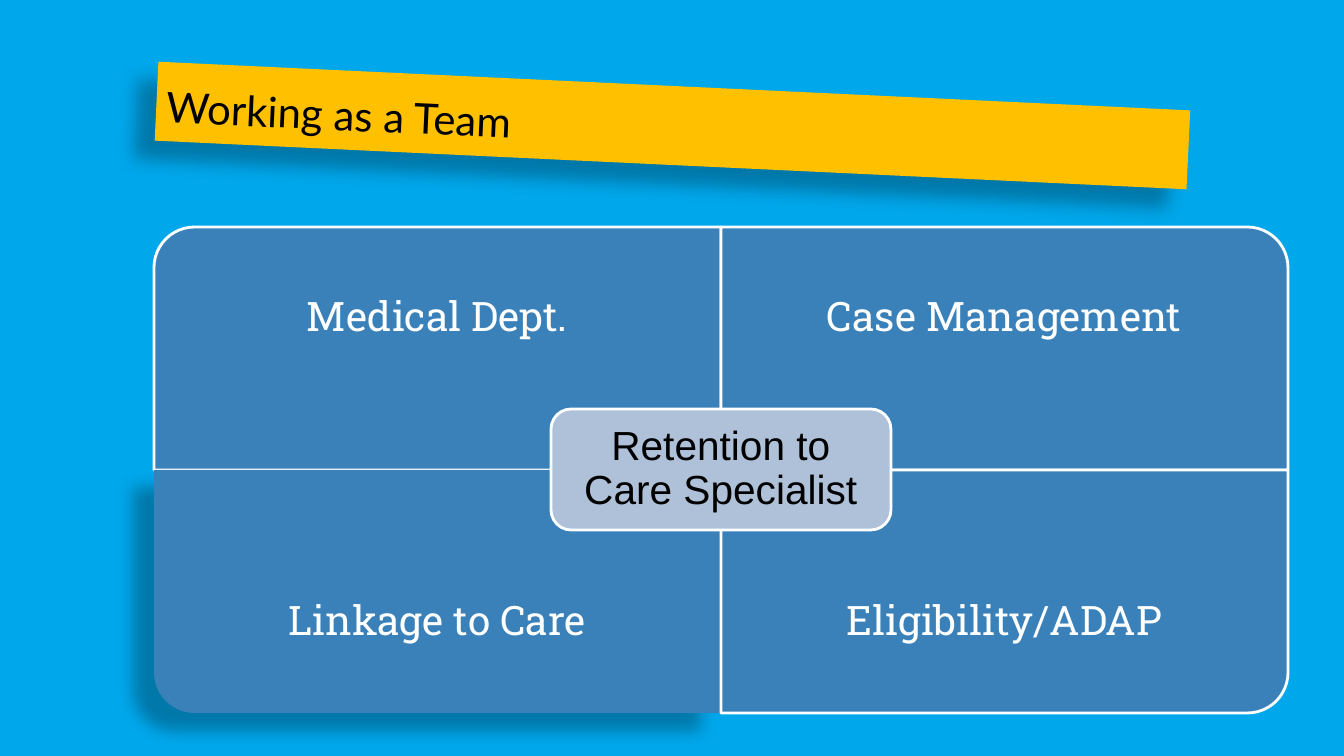
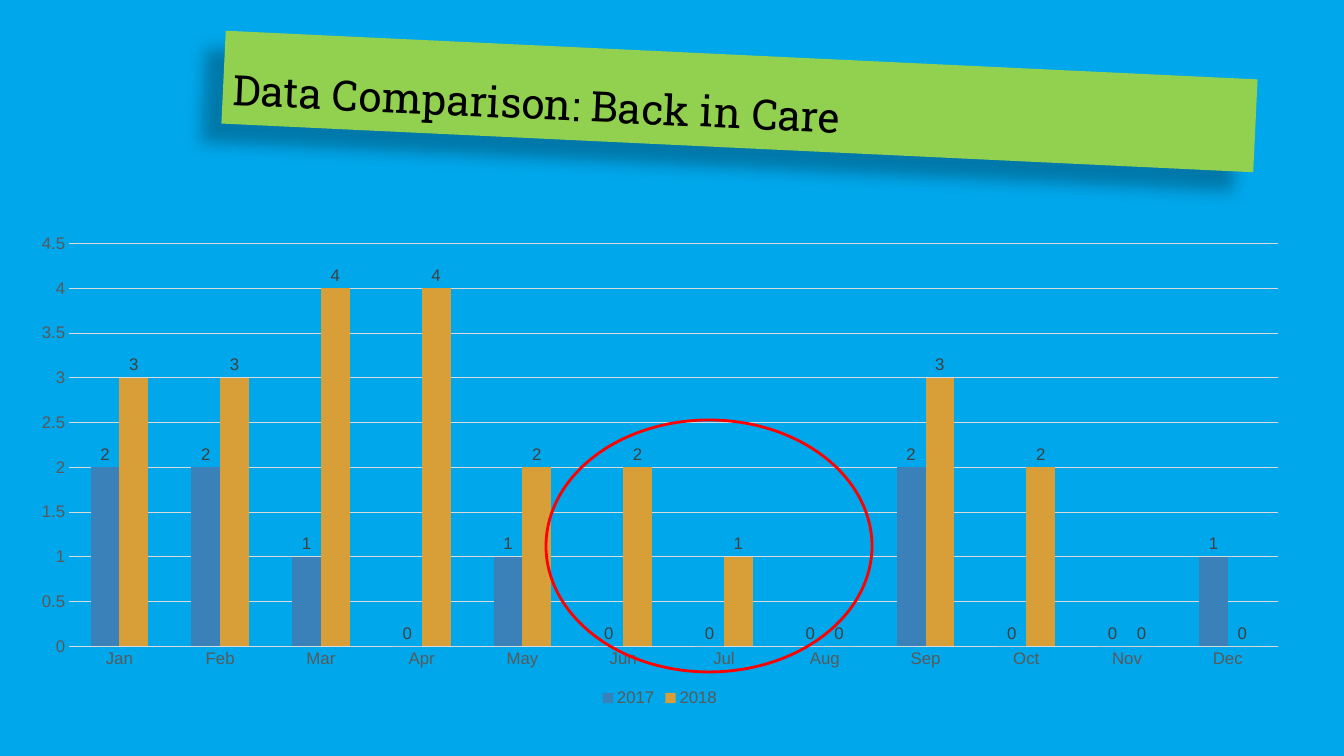
"""Build two slides on teamwork and back-in-care data."""
import dataclasses

import lxml.etree
import pptx
import pptx.chart.data
import pptx.dml.color
import pptx.enum.chart
import pptx.enum.shapes
import pptx.enum.text
import pptx.oxml.ns
import pptx.util

SHAPE = pptx.enum.shapes.MSO_SHAPE
ANCHOR = pptx.enum.text.MSO_ANCHOR
ALIGN = pptx.enum.text.PP_ALIGN


@dataclasses.dataclass(frozen=True)
class Theme:
    """Hold the colours, fonts and type sizes."""
    back: str = "00A7EB"
    gold: str = "FFC000"
    green: str = "92D050"
    blue: str = "3A81BA"
    orange: str = "D89F39"
    pale: str = "AFC1D9"
    white: str = "FFFFFF"
    black: str = "000000"
    red: str = "FF0000"
    grid: str = "D9D9D9"
    axis_text: str = "595959"
    label_text: str = "404040"
    sans: str = "Arial"
    title_sans: str = "Lato"
    slab: str = "Roboto Slab"
    title_size: int = 30
    panel_size: int = 29
    chart_size: int = 12


THEME = Theme()


def px(n):
    """Turn pixels into EMU."""
    return pptx.util.Emu(round(n * 914400 / 100.8))


def rgb(value):
    """Turn a hex string into a colour."""
    return pptx.dml.color.RGBColor.from_string(value)


def set_all(obj, **values):
    """Set several attributes on an object."""
    for name, value in values.items():
        setattr(obj, name, value)


def set_font(font, name, size, colour):
    """Set the face, size and colour of a font."""
    set_all(font, name=name, size=pptx.util.Pt(size), bold=False)
    font.color.rgb = rgb(colour)


def set_fill(obj, colour):
    """Fill an object with one colour."""
    obj.fill.solid()
    obj.fill.fore_color.rgb = rgb(colour)


def add_shadow(sp):
    """Cast a soft shadow to the lower left."""
    sp.shadow.inherit = False
    qn = pptx.oxml.ns.qn
    effects = sp._element.spPr.find(qn("a:effectLst"))
    shadow = lxml.etree.SubElement(
        effects, qn("a:outerShdw"), blurRad="150000", dist="250000",
        dir="8460000", algn="tr", rotWithShape="0")
    colour = lxml.etree.SubElement(shadow, qn("a:srgbClr"), val=THEME.black)
    lxml.etree.SubElement(colour, qn("a:alpha"), val="28000")


def write(sp, text, font, size, colour, inset, anchor, align, spacing=1.0):
    """Write one formatted paragraph into a shape."""
    tf = sp.text_frame
    set_all(tf, word_wrap=True, vertical_anchor=anchor,
            auto_size=pptx.enum.text.MSO_AUTO_SIZE.NONE)
    set_all(tf, **{"margin_" + side: px(inset)
                   for side in ("left", "top", "right", "bottom")})
    p = tf.paragraphs[0]
    set_all(p, alignment=align, line_spacing=spacing)
    r = p.add_run()
    r.text = text
    set_font(r.font, font, size, colour)


def write_panel(sp, text, font, colour, inset):
    """Write a centred panel caption."""
    write(sp, text, font, THEME.panel_size, colour, inset,
          ANCHOR.MIDDLE, ALIGN.CENTER, 0.9)


def add_slide(prs, title, font, fill, left, top, height):
    """Add a slide with a tilted title band."""
    s = prs.slides.add_slide(prs.slide_layouts[5])
    sp = s.shapes.title
    set_all(sp, left=px(left), top=px(top), width=px(1033),
            height=px(height), rotation=2.7)
    set_fill(sp, fill)
    add_shadow(sp)
    write(sp, title, font, THEME.title_size, THEME.black, 10,
          ANCHOR.BOTTOM, ALIGN.LEFT)
    return s


def add_shape(s, kind, left, top, width, height, fill=None, line=None):
    """Add a flat shape with an optional fill and outline."""
    sp = s.shapes.add_shape(kind, px(left), px(top), px(width), px(height))
    sp.shadow.inherit = False
    if fill:
        set_fill(sp, fill)
    else:
        sp.fill.background()
    if line:
        sp.line.color.rgb = rgb(line)
        sp.line.width = pptx.util.Pt(2)
    else:
        sp.line.fill.background()
    return sp


def add_quadrant(s, text, col, row, rotation, raised):
    """Add one quadrant with its round corner outward and its caption."""
    width, height, text_height = 567, 243, 182
    left, top = 154 + col * width, 227 + row * height
    w, h = (height, width) if rotation % 180 else (width, height)
    sp = add_shape(s, SHAPE.ROUND_1_RECTANGLE, left + (width - w) / 2,
                   top + (height - h) / 2, w, h, THEME.blue,
                   None if raised else THEME.white)
    sp.rotation = rotation
    if raised:
        add_shadow(sp)
    box = s.shapes.add_textbox(
        px(left), px(top + row * (height - text_height)), px(width),
        px(text_height))
    write_panel(box, text, THEME.slab, THEME.white, 23)


def add_columns(s, categories, series):
    """Add the clustered column chart."""
    data = pptx.chart.data.CategoryChartData()
    data.categories = categories
    for name, values, _ in series:
        data.add_series(name, values)
    chart = s.shapes.add_chart(
        pptx.enum.chart.XL_CHART_TYPE.COLUMN_CLUSTERED,
        px(16), px(225), px(1288), px(486), data).chart
    set_all(chart, has_title=False, has_legend=True)
    set_font(chart.font, THEME.sans, THEME.chart_size, THEME.axis_text)
    set_all(chart.legend, include_in_layout=False,
            position=pptx.enum.chart.XL_LEGEND_POSITION.BOTTOM)
    for axis in (chart.category_axis, chart.value_axis):
        set_all(axis, major_tick_mark=pptx.enum.chart.XL_TICK_MARK.NONE,
                minor_tick_mark=pptx.enum.chart.XL_TICK_MARK.NONE)
        axis.format.line.fill.background()
    set_all(chart.value_axis, minimum_scale=0, maximum_scale=4.5,
            major_unit=0.5, has_major_gridlines=True)
    line = chart.value_axis.major_gridlines.format.line
    line.color.rgb = rgb(THEME.grid)
    line.width = pptx.util.Pt(0.75)
    plot = chart.plots[0]
    set_all(plot, gap_width=150, overlap=0, vary_by_categories=False)
    for bars, (_, _, colour) in zip(plot.series, series):
        set_fill(bars.format, colour)
        set_all(bars.data_labels, show_value=True,
                position=pptx.enum.chart.XL_LABEL_POSITION.OUTSIDE_END)
        set_font(bars.data_labels.font, THEME.sans, THEME.chart_size,
                 THEME.label_text)


def team_slide(prs):
    """Build the slide of the four departments."""
    s = add_slide(prs, "Working as a Team", THEME.title_sans, THEME.gold,
                  156, 86, 79)
    for quadrant in (("Medical Dept.", 0, 0, 270, False),
                     ("Case Management", 1, 0, 0, False),
                     ("Linkage to Care", 0, 1, 180, True),
                     ("Eligibility/ADAP", 1, 1, 90, False)):
        add_quadrant(s, *quadrant)
    hub = add_shape(s, SHAPE.ROUNDED_RECTANGLE, 551, 409, 340, 121,
                    THEME.pale, THEME.white)
    write_panel(hub, "Retention to Care Specialist", THEME.sans,
                THEME.black, 12)


def data_slide(prs):
    """Build the slide of the monthly comparison."""
    s = add_slide(prs, "Data Comparison: Back in Care", THEME.slab,
                  THEME.green, 223, 55, 93)
    months = "Jan Feb Mar Apr May Jun Jul Aug Sep Oct Nov Dec".split()
    add_columns(s, months, (
        ("2017", (2, 2, 1, 0, 1, 0, 0, 0, 2, 0, 0, 1), THEME.blue),
        ("2018", (3, 3, 4, 4, 2, 2, 1, 0, 3, 2, 0, 0), THEME.orange)))
    add_shape(s, SHAPE.OVAL, 546, 420, 326, 252, line=THEME.red)


def main():
    """Build and save the presentation."""
    prs = pptx.Presentation()
    set_all(prs, slide_width=px(1344), slide_height=px(756))
    set_fill(prs.slide_master.background, THEME.back)
    team_slide(prs)
    data_slide(prs)
    prs.save("out.pptx")


if __name__ == "__main__":
    main()
